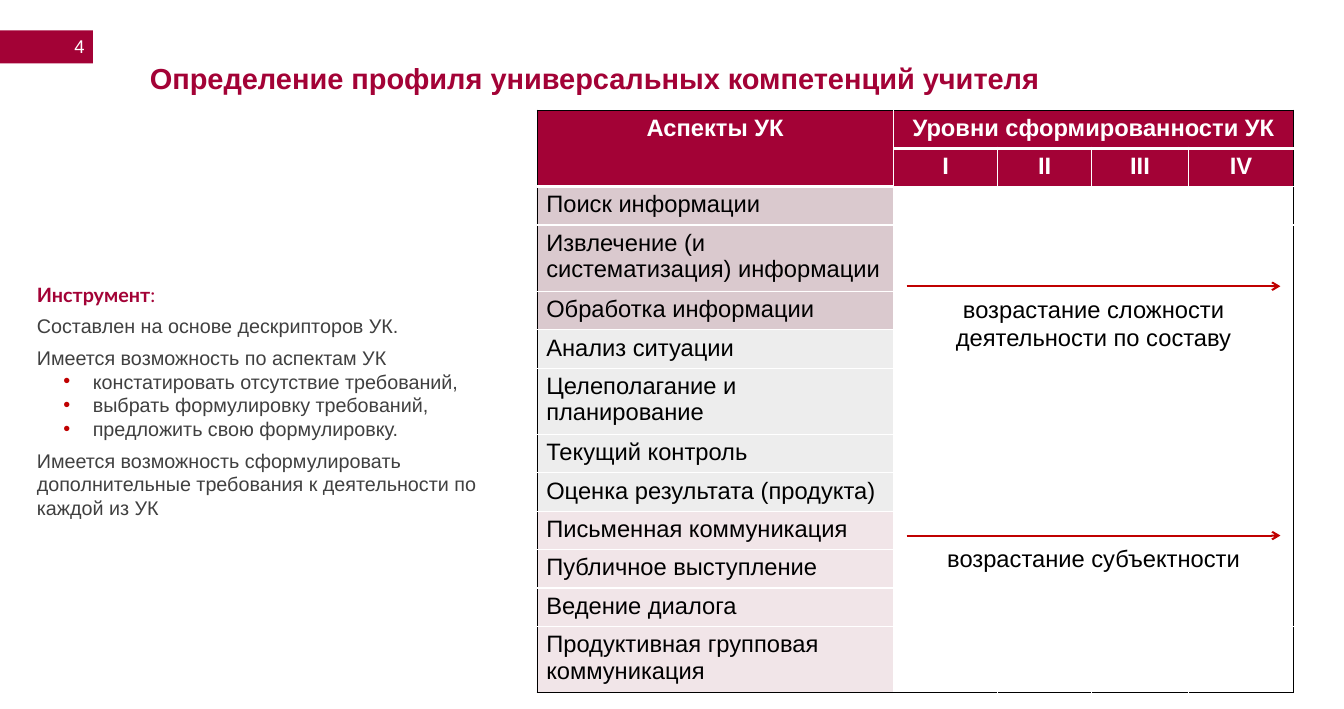
"""Build the slide on the profile of a teacher's universal competences."""
from dataclasses import dataclass

from lxml.etree import SubElement
from pptx import Presentation
from pptx.dml.color import RGBColor
from pptx.enum.shapes import MSO_CONNECTOR, MSO_SHAPE
from pptx.enum.text import MSO_ANCHOR, PP_ALIGN
from pptx.oxml.ns import qn
from pptx.util import Inches, Pt

CRIMSON, RED, GRAY = "A30236", "C00000", "404040"
WHITE, BLACK = "FFFFFF", "000000"
COL_WIDTHS = (3.76, 1.1, 0.99, 1.02, 1.11)
TABLE_HEIGHT, TALL_ROW = 6.15, 0.7
LEVELS = ("I", "II", "III", "IV")
MERGES = {(0, 0): (1, 0), (0, 1): (0, 4), (3, 1): (11, 4)}


@dataclass(frozen=True)
class Aspect:
    text: str
    fill: str
    alpha: int
    tall: bool = False


@dataclass(frozen=True)
class Para:
    text: str
    before: float = 0
    bullet: bool = False
    align: PP_ALIGN = PP_ALIGN.JUSTIFY


@dataclass(frozen=True)
class Growth:
    text: str
    y: float
    height: float


SEARCH, PLANNING, TALK = ("52011B", 21), ("3B3838", 9), ("770125", 10)
ASPECTS = (
    Aspect("Поиск информации", *SEARCH),
    Aspect("Извлечение (и систематизация) информации", *SEARCH, tall=True),
    Aspect("Обработка информации", *SEARCH),
    Aspect("Анализ ситуации", *PLANNING),
    Aspect("Целеполагание и планирование", *PLANNING, tall=True),
    Aspect("Текущий контроль", *PLANNING),
    Aspect("Оценка результата (продукта)", *PLANNING),
    Aspect("Письменная коммуникация", *TALK),
    Aspect("Публичное выступление", *TALK),
    Aspect("Ведение диалога", *TALK),
    Aspect("Продуктивная групповая коммуникация", *TALK, tall=True),
)
TOOL_NOTES = (
    Para("Составлен на основе дескрипторов УК.", 6),
    Para("Имеется возможность по аспектам УК", 6),
    Para("констатировать отсутствие требований,", bullet=True),
    Para("выбрать формулировку требований,", bullet=True),
    Para("предложить свою формулировку.", bullet=True),
    Para("Имеется возможность сформулировать дополнительные требования "
         "к деятельности по каждой из УК", 6, align=PP_ALIGN.LEFT),
)
GROWTHS = (
    Growth("возрастание сложности деятельности по составу", 3.02, 0.71),
    Growth("возрастание субъектности", 5.65, 0.4),
)


def rgb(color: str) -> RGBColor:
    return RGBColor.from_string(color)


def style(r, size: float, color: str, bold: bool = False, name: str = "Arial") -> None:
    r.font.size, r.font.bold, r.font.name = Pt(size), bold, name
    r.font.color.rgb = rgb(color)


def text_box(s, left: float, top: float, width: float, height: float):
    tf = s.shapes.add_textbox(*map(Inches, (left, top, width, height))).text_frame
    tf.word_wrap = True
    return tf


def write(tf, text: str, size: float, color: str, bold: bool = False,
          align: PP_ALIGN = PP_ALIGN.LEFT) -> None:
    tf.text = text
    p = tf.paragraphs[0]
    p.alignment = align
    style(p.runs[0], size, color, bold)


def add_page_mark(s) -> None:
    sp = s.shapes.add_shape(MSO_SHAPE.RECTANGLE, 0, Inches(0.32), Inches(0.98), Inches(0.35))
    sp.shadow.inherit = False
    sp.fill.solid()
    sp.fill.fore_color.rgb = rgb(CRIMSON)
    sp.line.fill.background()
    tf = text_box(s, 0.18, 0.29, 0.81, 0.4)
    tf.vertical_anchor = MSO_ANCHOR.MIDDLE
    write(tf, "4", 14, WHITE, align=PP_ALIGN.RIGHT)


def add_title(s) -> None:
    tf = text_box(s, 1.58, 0.68, 9.55, 0.4)
    tf.margin_left = tf.margin_top = tf.margin_right = tf.margin_bottom = 0
    write(tf, "Определение профиля универсальных компетенций учителя", 22, CRIMSON, True)
    tf.paragraphs[0].line_spacing = 0.9


def add_bullet(p) -> None:
    pPr = p._p.get_or_add_pPr()
    pPr.set("marL", str(Inches(0.59)))
    pPr.set("indent", str(Inches(-0.31)))
    SubElement(SubElement(pPr, qn("a:buClr")), qn("a:srgbClr"), val=RED)
    SubElement(pPr, qn("a:buFont"), typeface="Arial")
    SubElement(pPr, qn("a:buChar"), char="•")


def add_tool_notes(s) -> None:
    tf = text_box(s, 0.29, 2.93, 4.86, 2.88)
    p = tf.paragraphs[0]
    for text, bold in (("Инструмент", True), (":", False)):
        r = p.add_run()
        r.text = text
        style(r, 15, CRIMSON, bold, "Lato")
    for note in TOOL_NOTES:
        p = tf.add_paragraph()
        p.text = note.text
        p.alignment = note.align
        p.space_before = Pt(note.before)
        if note.bullet:
            add_bullet(p)
        style(p.runs[0], 15, GRAY)


def set_border(cell, side: str, color: str, width: float) -> None:
    ln = SubElement(cell._tc.get_or_add_tcPr(), qn(f"a:ln{side}"), w=str(Pt(width)))
    SubElement(SubElement(ln, qn("a:solidFill")), qn("a:srgbClr"), val=color)


def set_borders(cell, row: int, col: int, last_row: int) -> None:
    end_row, end_col = MERGES.get((row, col), (row, col))
    outer = {"L": col == 0, "R": end_col == len(COL_WIDTHS) - 1,
             "T": row == 0, "B": end_row == last_row}
    for side, is_outer in outer.items():
        inner_width = 3 if side == "B" and row == 0 else 1
        set_border(cell, side, *((BLACK, 0.5) if is_outer else (WHITE, inner_width)))


def fill_cell(cell, color: str, alpha: int = 100) -> None:
    cell.fill.solid()
    cell.fill.fore_color.rgb = rgb(color)
    if alpha < 100:
        clr = cell._tc.tcPr.find(qn("a:solidFill")).find(qn("a:srgbClr"))
        SubElement(clr, qn("a:alpha"), val=str(alpha * 1000))


def add_profile_table(s) -> None:
    rows = len(ASPECTS) + 2
    table = s.shapes.add_table(rows, len(COL_WIDTHS), Inches(5.66), Inches(1.16),
                               Inches(sum(COL_WIDTHS)), Inches(TABLE_HEIGHT)).table
    table.first_row = table.horz_banding = False
    for column, width in zip(table.columns, COL_WIDTHS):
        column.width = Inches(width)
    tall = [False, False] + [aspect.tall for aspect in ASPECTS]
    short_row = (TABLE_HEIGHT - sum(tall) * TALL_ROW) / tall.count(False)
    for row, is_tall in zip(table.rows, tall):
        row.height = Inches(TALL_ROW if is_tall else short_row)
    for start, end in MERGES.items():
        table.cell(*start).merge(table.cell(*end))
    for row in range(rows):
        for col in range(len(COL_WIDTHS)):
            cell = table.cell(row, col)
            if not cell.is_spanned:
                set_borders(cell, row, col, rows - 1)
            cell.fill.background()
    headers = {(0, 0): "Аспекты УК", (0, 1): "Уровни сформированности УК"}
    headers |= {(1, col): level for col, level in enumerate(LEVELS, 1)}
    for place, text in headers.items():
        cell = table.cell(*place)
        fill_cell(cell, CRIMSON)
        write(cell.text_frame, text, 18, WHITE, True, PP_ALIGN.CENTER)
    for row, aspect in enumerate(ASPECTS, 2):
        cell = table.cell(row, 0)
        fill_cell(cell, aspect.fill, aspect.alpha)
        write(cell.text_frame, aspect.text, 18, BLACK)


def add_growth(s, growth: Growth) -> None:
    write(text_box(s, 9.56, growth.y + 0.04, 3.94, growth.height),
          growth.text, 18, BLACK, align=PP_ALIGN.CENTER)
    arrow = s.shapes.add_connector(MSO_CONNECTOR.STRAIGHT, Inches(9.56), Inches(growth.y),
                                   Inches(13.5), Inches(growth.y))
    arrow.line.color.rgb = rgb(RED)
    arrow.line.width = Pt(1.5)
    SubElement(arrow.line._get_or_add_ln(), qn("a:tailEnd"), type="arrow")
    SubElement(arrow._element.spPr, qn("a:effectLst"))


def main() -> None:
    prs = Presentation()
    prs.slide_width, prs.slide_height = Inches(14.17), Inches(7.48)
    s = prs.slides.add_slide(prs.slide_layouts[6])
    add_page_mark(s)
    add_title(s)
    add_tool_notes(s)
    add_profile_table(s)
    for growth in GROWTHS:
        add_growth(s, growth)
    prs.save("out.pptx")


if __name__ == "__main__":
    main()
